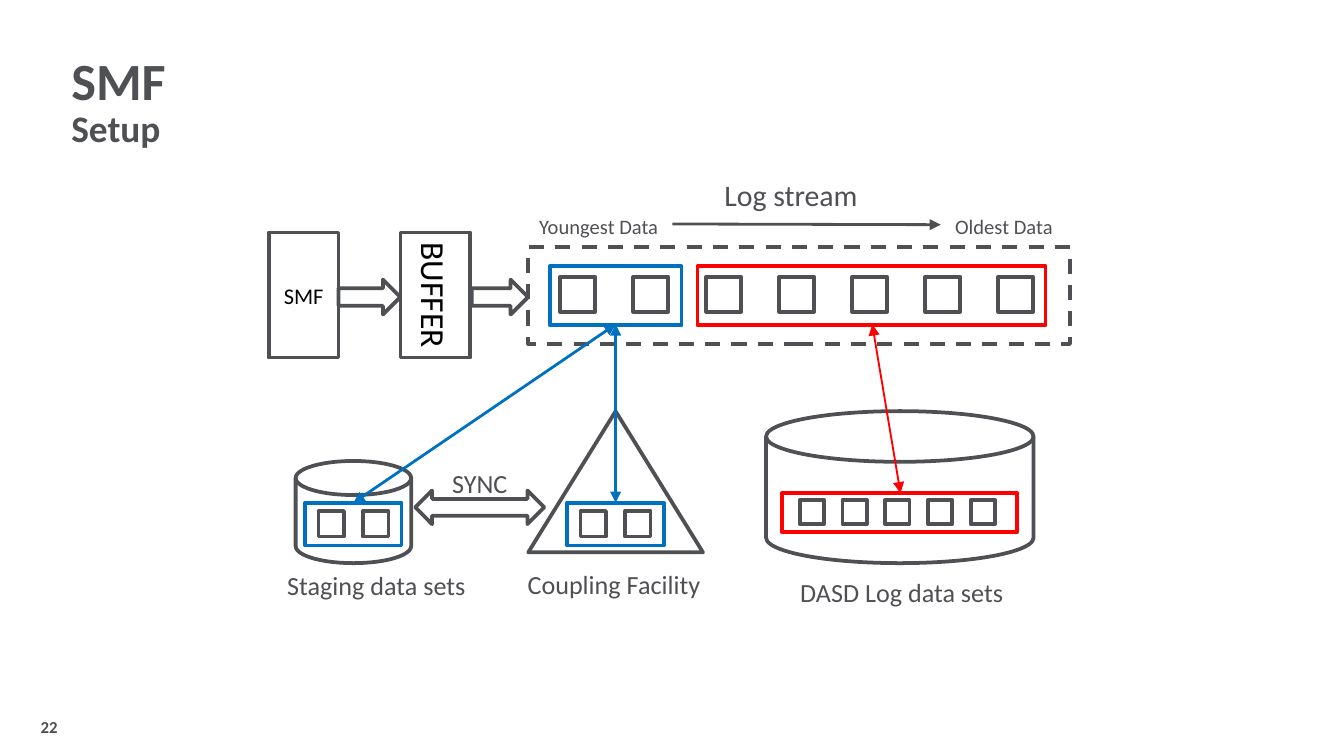
from lxml.etree import SubElement
from pptx import Presentation
from pptx.dml.color import RGBColor
from pptx.enum.dml import MSO_LINE
from pptx.enum.shapes import MSO_CONNECTOR, MSO_SHAPE
from pptx.enum.text import MSO_ANCHOR, MSO_AUTO_SIZE, PP_ALIGN
from pptx.oxml.ns import qn
from pptx.util import Pt

GRAY = RGBColor(0x4F, 0x50, 0x54)
BLUE = RGBColor(0x00, 0x70, 0xC0)
RED = RGBColor(0xFF, 0x00, 0x00)
BLACK = RGBColor(0x00, 0x00, 0x00)
WHITE = RGBColor(0xFF, 0xFF, 0xFF)
FONT = "Calibri"

# Content: boxes are (left, top, width, height) in points
TITLE = ("SMF", (31, 12.2, 652.3, 51.1), 28, MSO_ANCHOR.BOTTOM)
SUBTITLE = ("Setup", (31, 52.6, 613.4, 36), 20, MSO_ANCHOR.TOP)

LOG_STREAM = (283, 132.5, 290.2, 51.8)
CONTAINERS = [
    (MSO_SHAPE.ISOSCELES_TRIANGLE, (283, 220.3, 93.6, 75.6)),
    (MSO_SHAPE.FLOWCHART_MAGNETIC_DISK, (410.4, 220.3, 143.3, 81.4)),
    (MSO_SHAPE.FLOWCHART_MAGNETIC_DISK, (158.4, 247, 61.9, 54.7)),
]
FRAMES = [
    (BLUE, (294.5, 142.6, 70.6, 31.7)),
    (RED, (373.7, 142.6, 186.5, 31.7)),
    (BLUE, (303.8, 269.3, 51.8, 23)),
    (RED, (419, 264.2, 126, 20.9)),
    (BLUE, (163.4, 269.3, 51.8, 23)),
]
# Rows of data blocks: left, top, step, size, count
BLOCK_ROWS = [
    (300.2, 148.3, 39.1, 18.7, 7),
    (311, 273.8, 23.8, 13.7, 2),
    (428.4, 267.8, 22.9, 13, 5),
    (170.6, 273.8, 23.8, 13.7, 2),
]
PROCESSES = [
    ("SMF", (144, 124.6, 37.4, 67), 12, None, 0),
    ("BUFFER", (214.6, 124.6, 37.4, 67), 18, "vert", 8),
]
BLOCK_ARROWS = [
    (MSO_SHAPE.RIGHT_ARROW, (181.4, 149.8, 33.1, 18.7)),
    (MSO_SHAPE.RIGHT_ARROW, (252.7, 149.8, 30.2, 18.7)),
    (MSO_SHAPE.LEFT_RIGHT_ARROW, (222.5, 262.8, 69.1, 18)),
]
# Labels: text, box, size, anchor, fill
LABELS = [
    ("Log stream", (380.2, 90, 87.1, 30.2), 16, MSO_ANCHOR.TOP, WHITE),
    ("Youngest Data", (280.8, 110.2, 79.9, 20.2), 11, MSO_ANCHOR.TOP, WHITE),
    ("Oldest Data", (504, 110.5, 67.7, 20.2), 11, MSO_ANCHOR.TOP, WHITE),
    ("Coupling Facility", (275, 297.4, 108, 30.2), 14, MSO_ANCHOR.MIDDLE, None),
    ("DASD Log data sets", (421.2, 301.7, 123.8, 30.2), 14, MSO_ANCHOR.MIDDLE, None),
    ("Staging data sets", (146.2, 298.1, 110.9, 30.2), 14, MSO_ANCHOR.MIDDLE, None),
    ("SYNC", (234.7, 243.4, 44.6, 30.2), 14, MSO_ANCHOR.MIDDLE, None),
]
# Lines: start, end, colour, width, both ends
LINES = [
    ((329.8, 173.8), (329.8, 269.3), BLUE, 1.5, True),
    ((329.8, 173.8), (189.4, 269.3), BLUE, 1.5, True),
    ((467.3, 173.8), (482.4, 264.2), RED, 1, True),
    ((360.2, 120), (504, 120.4), GRAY, 1.5, False),
]
PAGE = ("22", (7.9, 381.6, 23, 15.8))


def points(values):
    return [Pt(v) for v in values]


def write(tf, text, size, color=GRAY, bold=False, align=PP_ALIGN.CENTER,
          spacing=1.05, after=0):
    p = tf.paragraphs[0]
    p.alignment, p.line_spacing = align, spacing
    p.space_before, p.space_after = Pt(0), Pt(after)
    r = p.add_run()
    r.text = text
    r.font.name, r.font.size, r.font.bold = FONT, Pt(size), bold
    r.font.color.rgb = color


def no_insets(tf):
    tf.margin_left = tf.margin_right = tf.margin_top = tf.margin_bottom = 0


def add_outline(s, kind, box, color=GRAY, fill=None):
    sp = s.shapes.add_shape(kind, *points(box))
    sp.shadow.inherit = False
    if fill is None:
        sp.fill.background()
    else:
        sp.fill.solid()
        sp.fill.fore_color.rgb = fill
    sp.line.color.rgb, sp.line.width = color, Pt(2)
    return sp


def add_line(s, start, end, color, width, both_ends):
    line = s.shapes.add_connector(MSO_CONNECTOR.STRAIGHT, *points(start + end))
    line.line.color.rgb, line.line.width = color, Pt(width)
    ln = line.line._get_or_add_ln()
    for tag in ("a:headEnd", "a:tailEnd") if both_ends else ("a:tailEnd",):
        SubElement(ln, qn(tag), type="triangle")
    SubElement(line._element.spPr, qn("a:effectLst"))


def main():
    prs = Presentation()
    prs.slide_width, prs.slide_height = Pt(720), Pt(405)
    s = prs.slides.add_slide(prs.slide_layouts[0])

    # Title and subtitle
    for holder, (text, box, size, anchor) in zip(s.placeholders, (TITLE, SUBTITLE)):
        holder.left, holder.top, holder.width, holder.height = points(box)
        tf = holder.text_frame
        tf.auto_size, tf.vertical_anchor = MSO_AUTO_SIZE.NONE, anchor
        write(tf, text, size, bold=True, align=PP_ALIGN.LEFT, spacing=1)

    # Log stream, storage and their data blocks
    stream = add_outline(s, MSO_SHAPE.RECTANGLE, LOG_STREAM)
    stream.line.dash_style = MSO_LINE.DASH
    for kind, box in CONTAINERS:
        add_outline(s, kind, box)
    for left, top, step, size, count in BLOCK_ROWS:
        for i in range(count):
            add_outline(s, MSO_SHAPE.RECTANGLE, (left + i * step, top, size, size),
                        fill=WHITE)
    for color, box in FRAMES:
        add_outline(s, MSO_SHAPE.RECTANGLE, box, color)

    # Processes and block arrows
    for text, box, size, direction, after in PROCESSES:
        tf = add_outline(s, MSO_SHAPE.RECTANGLE, box).text_frame
        no_insets(tf)
        tf.vertical_anchor = MSO_ANCHOR.MIDDLE
        if direction:
            tf._txBody.bodyPr.set("vert", direction)
        write(tf, text, size, BLACK, after=after)
    for kind, box in BLOCK_ARROWS:
        add_outline(s, kind, box)

    # Labels
    for text, box, size, anchor, fill in LABELS:
        label = s.shapes.add_textbox(*points(box))
        if fill is not None:
            label.fill.solid()
            label.fill.fore_color.rgb = fill
        tf = label.text_frame
        tf.word_wrap, tf.vertical_anchor = False, anchor
        write(tf, text, size)

    # Thin arrows
    for line in LINES:
        add_line(s, *line)

    # Page number
    text, box = PAGE
    tf = s.shapes.add_textbox(*points(box)).text_frame
    no_insets(tf)
    tf.word_wrap, tf.vertical_anchor = True, MSO_ANCHOR.MIDDLE
    write(tf, text, 9, bold=True, align=PP_ALIGN.RIGHT, spacing=1)

    prs.save("out.pptx")


if __name__ == "__main__":
    main()
